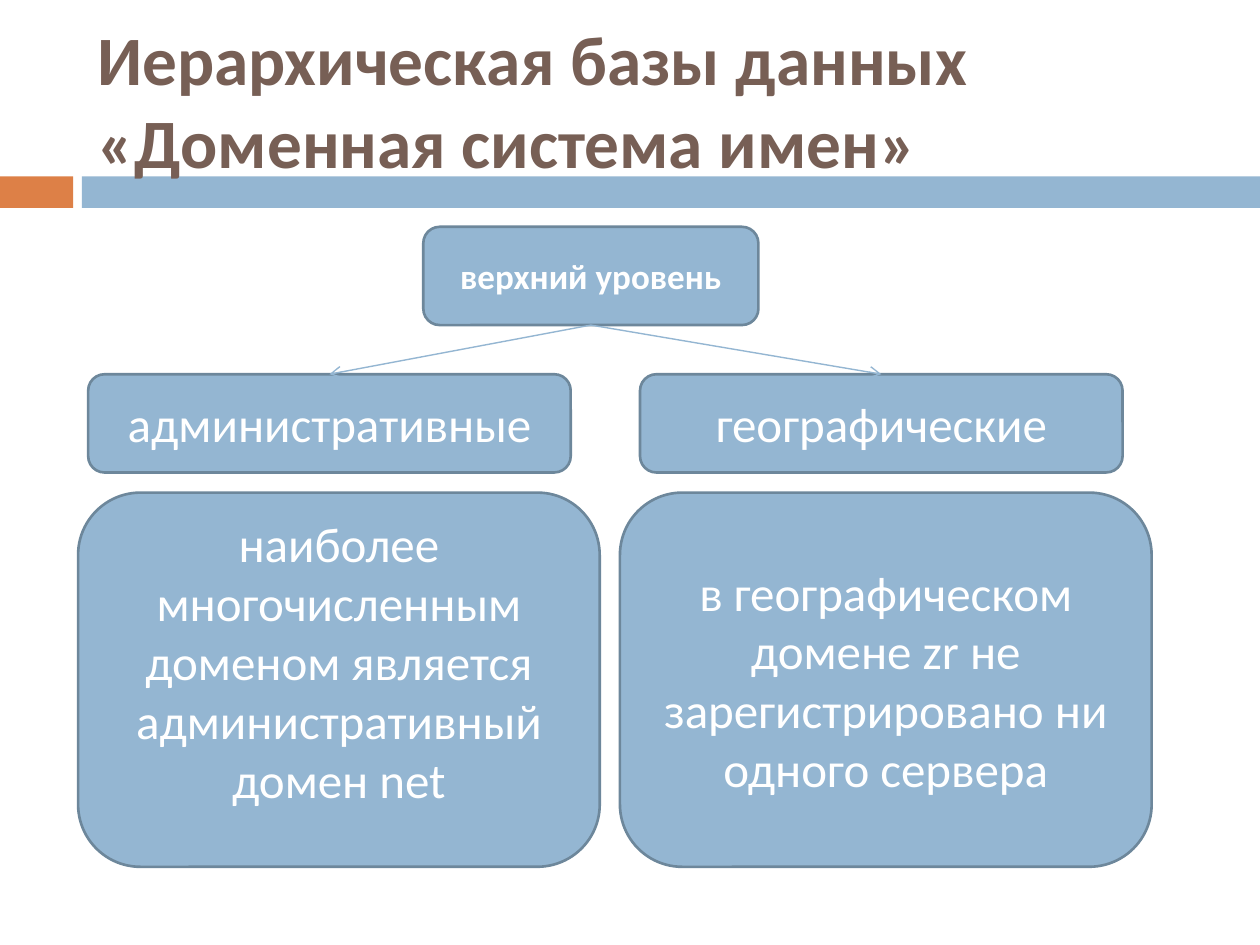
from dataclasses import dataclass

from lxml import etree
from pptx import Presentation
from pptx import util as u
from pptx.dml.color import RGBColor
from pptx.enum import shapes, text
from pptx.oxml import ns

WIDTH, HEIGHT = u.Inches(10), u.Inches(7.5)
COLS, ROWS = 100, 75


@dataclass(frozen=True)
class Theme:
    font: str = "Calibri"
    blue: str = "94B6D2"
    edge: str = "6D879B"
    accent: str = "DD8047"
    brown: str = "775F55"
    white: str = "FFFFFF"
    title: float = 39.6
    top: float = 20
    body: float = 28
    border: float = 1.5
    arrow: float = 0.79


@dataclass(frozen=True)
class Area:
    """A place on the slide, in grid columns and rows."""
    col: float
    row: float
    cols: float
    rows: float

    def place(self) -> tuple:
        return (round(WIDTH * self.col / COLS), round(HEIGHT * self.row / ROWS),
                round(WIDTH * self.cols / COLS), round(HEIGHT * self.rows / ROWS))


@dataclass(frozen=True)
class Node:
    label: str
    area: Area
    size: float
    bold: bool = False
    lift: float = 0.05  # bottom inset, inches


THEME = Theme()
BARS = [(Area(0, 14, 5.8, 2.5), THEME.accent),
        (Area(6.5, 14, 93.5, 2.5), THEME.blue)]
TITLE = Area(6.7, 2.5, 89.2, 10.8)
ROOT = Node("верхний уровень", Area(33.6, 18, 26.6, 7.8), THEME.top, True)
KINDS = [Node(label, Area(col, 29.7, 38.3, 7.8), THEME.body)
         for label, col in (("административные", 7), ("географические", 50.8))]
NOTES = [
    Node("наиболее многочисленным доменом является административный домен net",
         Area(6.2, 39.1, 41.4, 29.7), THEME.body, lift=0.35),
    Node("в географическом домене zr не зарегистрировано ни одного сервера",
         Area(49.2, 39.1, 42.2, 29.7), THEME.body),
]


def style(par, size: float, color: str, bold: bool) -> None:
    font = par.font
    font.name, font.size, font.bold = THEME.font, u.Pt(size), bold
    font.color.rgb = RGBColor.from_string(color)


def draw_shape(slide, kind, area: Area, fill: str):
    shape = slide.shapes.add_shape(kind, *area.place())
    shape.shadow.inherit = False
    shape.fill.solid()
    shape.fill.fore_color.rgb = RGBColor.from_string(fill)
    shape.line.fill.background()
    return shape


def draw_node(slide, node: Node):
    box = draw_shape(slide, shapes.MSO_SHAPE.ROUNDED_RECTANGLE, node.area, THEME.blue)
    box.line.color.rgb = RGBColor.from_string(THEME.edge)
    box.line.width = u.Pt(THEME.border)
    frame = box.text_frame
    frame.word_wrap = True
    frame.vertical_anchor = text.MSO_ANCHOR.MIDDLE
    frame.margin_bottom = u.Inches(node.lift)
    frame.text = node.label
    par = frame.paragraphs[0]
    par.alignment = text.PP_ALIGN.CENTER
    style(par, node.size, THEME.white, node.bold)
    return box


def draw_arrow(slide, start, end) -> None:
    """Join the bottom of one box to the top of another."""
    link = slide.shapes.add_connector(shapes.MSO_CONNECTOR.STRAIGHT, 0, 0, 0, 0)
    link.begin_connect(start, 2)
    link.end_connect(end, 0)
    link.line.color.rgb = RGBColor.from_string(THEME.blue)
    link.line.width = u.Pt(THEME.arrow)
    line = link.line._get_or_add_ln()
    etree.SubElement(line, ns.qn("a:tailEnd"), type="arrow")
    etree.SubElement(line.getparent(), ns.qn("a:effectLst"))


def set_title(slide, label: str) -> None:
    title = slide.shapes.title
    title.left, title.top, title.width, title.height = TITLE.place()
    frame = title.text_frame
    frame.text = label
    frame.word_wrap = True
    frame.auto_size = text.MSO_AUTO_SIZE.NONE
    frame.vertical_anchor = text.MSO_ANCHOR.MIDDLE
    par = frame.paragraphs[0]
    par.alignment = text.PP_ALIGN.LEFT
    style(par, THEME.title, THEME.brown, True)
    # Bring the title in front of the bars
    title.element.getparent().append(title.element)


def main() -> None:
    deck = Presentation()
    deck.slide_width, deck.slide_height = WIDTH, HEIGHT
    slide = deck.slides.add_slide(deck.slide_layouts[5])
    for area, fill in BARS:
        draw_shape(slide, shapes.MSO_SHAPE.RECTANGLE, area, fill)
    set_title(slide, "Иерархическая базы данных «Доменная система имен»")
    root = draw_node(slide, ROOT)
    kinds = [draw_node(slide, node) for node in KINDS]
    for node in NOTES:
        draw_node(slide, node)
    for kind in kinds:
        draw_arrow(slide, root, kind)
    deck.save("out.pptx")


if __name__ == "__main__":
    main()
